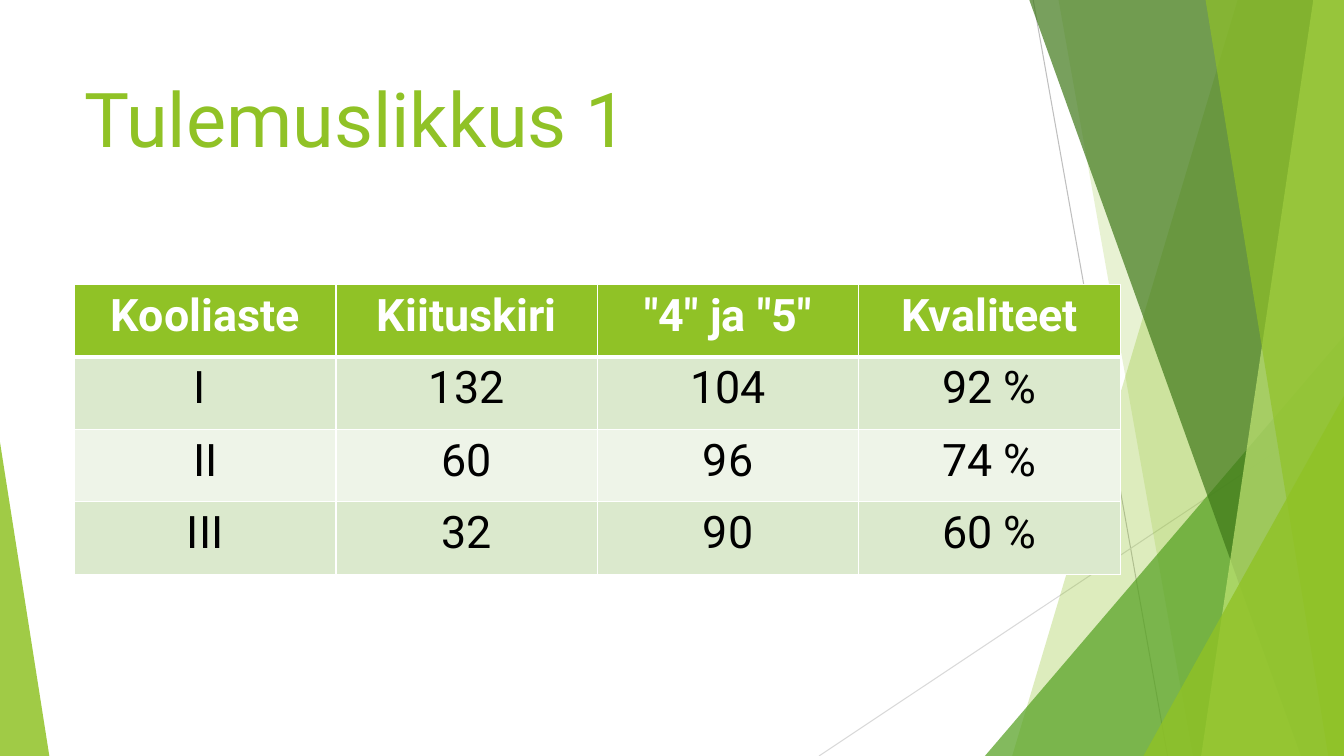
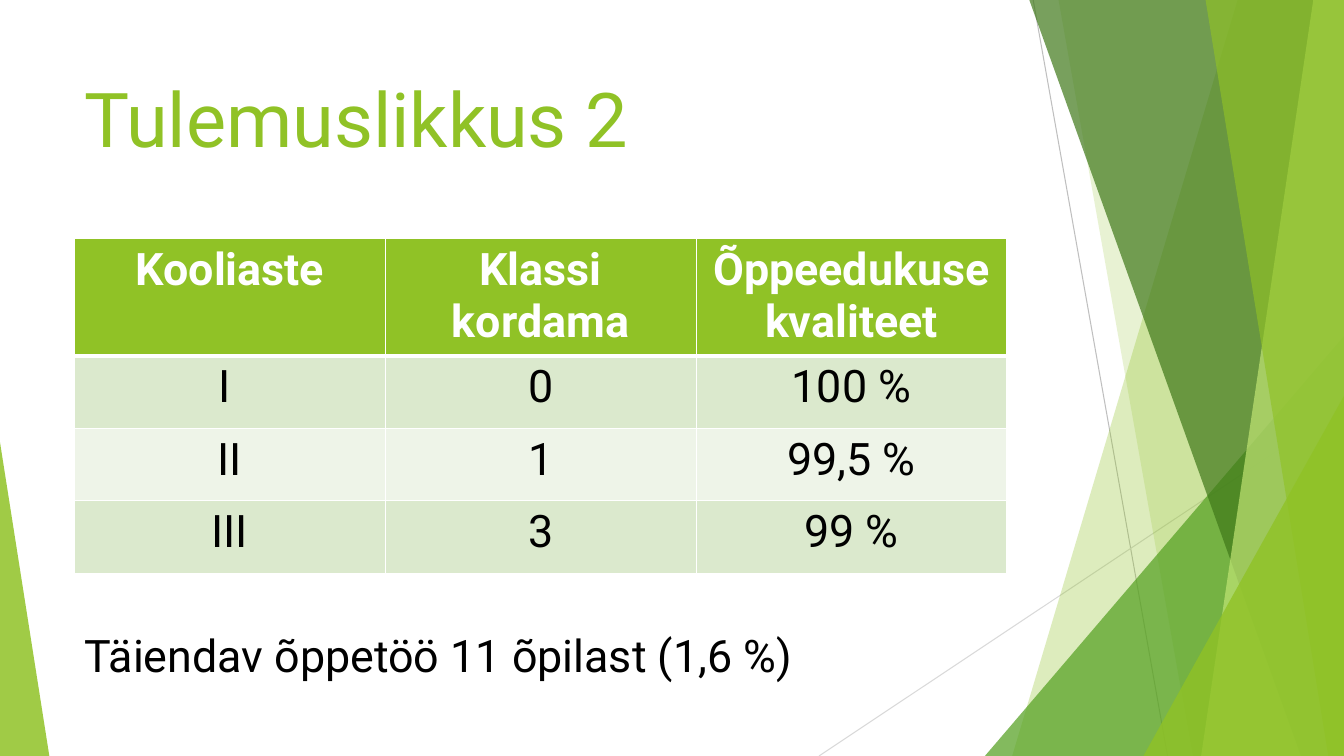
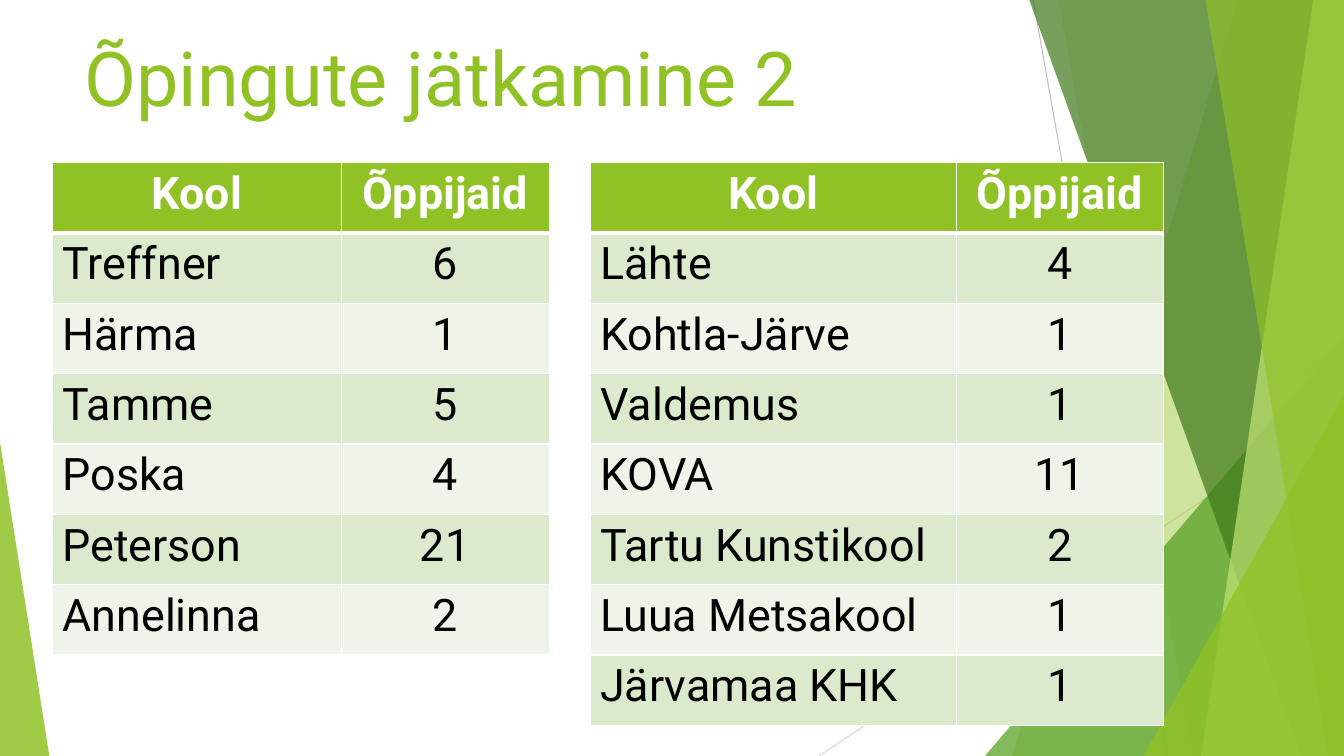
"""Build three slides of school results tables on a faceted green background."""
from lxml.etree import SubElement
from pptx import Presentation
from pptx.dml.color import RGBColor
from pptx.enum.shapes import MSO_CONNECTOR, MSO_SHAPE
from pptx.enum.text import PP_ALIGN
from pptx.oxml.ns import qn
from pptx.util import Pt

PX = 9525
WIDTH, HEIGHT = 1280, 720
FONT = "Roboto"
COLOURS = {
    "green": "90C226", "leaf": "54A021", "forest": "3F7819", "lime": "C0E474",
    "band": "DBE9CD", "pale": "EEF4E8", "white": "FFFFFF", "black": "000000",
    "grey": "BFBFBF", "light grey": "D9D9D9",
}
GUIDES = [("grey", 984, 0, 1112, 720), ("light grey", 1280, 387, 780, 720)]
FACETS = [
    ("panel", "green", 30, (1179, 964)),
    ("panel", "green", 20, (1008, 1136)),
    ("triangle", "leaf", 72, (938, 320, 342, 400, 1)),
    ("panel", "forest", 70, (980, 1239)),
    ("panel", "lime", 70, (1251, 1144)),
    ("panel", "green", 65, (1148, 1265)),
    ("triangle", "green", 80, (1089, 377, 191, 343, 1)),
    ("triangle", "green", 85, (0, 421, 47, 299, 0)),
]
SLIDES = [
    {
        "title": ("Tulemuslikkus 1", 64, 138),
        "tables": [{
            "left": 71, "top": 271, "columns": [249] * 4, "header": 69, "row": 69,
            "first": PP_ALIGN.CENTER,
            "rows": [
                ("Kooliaste", "Kiituskiri", '"4" ja "5"', "Kvaliteet"),
                ("I ", "132", "104", "92 %"),
                ("II", "60", "96", "74 %"),
                ("III", "32", "90", "60 %"),
            ],
        }],
    },
    {
        "title": ("Tulemuslikkus 2", 64, 138),
        "tables": [{
            "left": 71, "top": 227, "columns": [296] * 3, "header": 109, "row": 69,
            "first": PP_ALIGN.CENTER,
            "rows": [
                ("Kooliaste", "Klassi kordama", "Õppeedukuse kvaliteet"),
                ("I ", "0", "100 %"),
                ("II", "1", "99,5 %"),
                ("III", "3", "99 %"),
            ],
        }],
        "note": "Täiendav õppetöö 11 õpilast (1,6 %)",
    },
    {
        "title": ("Õpingute jätkamine 2", 25, 111),
        "tables": [
            {
                "left": 50, "top": 155, "columns": [275, 198], "header": 67, "row": 67,
                "first": PP_ALIGN.LEFT,
                "rows": [
                    ("Kool", "Õppijaid"), ("Treffner", "6"), ("Härma", "1"),
                    ("Tamme", "5"), ("Poska", "4"), ("Peterson", "21"),
                    ("Annelinna", "2"),
                ],
            },
            {
                "left": 562, "top": 155, "columns": [349, 197], "header": 67, "row": 67,
                "first": PP_ALIGN.LEFT,
                "rows": [
                    ("Kool", "Õppijaid"), ("Lähte", "4"), ("Kohtla-Järve", "1"),
                    ("Valdemus", "1"), ("KOVA", "11"), ("Tartu Kunstikool", "2"),
                    ("Luua Metsakool", "1"), ("Järvamaa KHK", "1"),
                ],
            },
        ],
    },
]


def write(frame, text, size, colour, bold=False, align=PP_ALIGN.LEFT):
    frame.word_wrap = True
    paragraph = frame.paragraphs[0]
    paragraph.text = text
    paragraph.alignment = align
    paragraph.font.name = FONT
    paragraph.font.size = Pt(size)
    paragraph.font.bold = bold
    paragraph.font.color.rgb = RGBColor.from_string(COLOURS[colour])


def add_border(cell, side, points):
    line = SubElement(cell._tc.get_or_add_tcPr(), qn(f"a:ln{side}"), w=str(Pt(points)))
    SubElement(SubElement(line, qn("a:solidFill")), qn("a:srgbClr"), val=COLOURS["white"])


presentation = Presentation()
presentation.slide_width = WIDTH * PX
presentation.slide_height = HEIGHT * PX

for content in SLIDES:
    slide = presentation.slides.add_slide(presentation.slide_layouts[6])
    shapes = slide.shapes

    for colour, *ends in GUIDES:
        guide = shapes.add_connector(MSO_CONNECTOR.STRAIGHT, *(end * PX for end in ends))
        guide.line.color.rgb = RGBColor.from_string(COLOURS[colour])
        guide.line.width = Pt(0.75)
        SubElement(guide._element.spPr, qn("a:effectLst"))

    for kind, colour, opacity, geometry in FACETS:
        if kind == "panel":
            top_x, bottom_x = geometry
            builder = shapes.build_freeform(top_x, -1, scale=PX)
            builder.add_line_segments([(WIDTH, -1), (WIDTH, HEIGHT), (bottom_x, HEIGHT)])
            facet = builder.convert_to_shape()
        else:
            *box, apex = geometry
            facet = shapes.add_shape(MSO_SHAPE.ISOSCELES_TRIANGLE, *(side * PX for side in box))
            facet.adjustments[0] = apex
        facet.shadow.inherit = False
        facet.line.fill.background()
        facet.fill.solid()
        facet.fill.fore_color.rgb = RGBColor.from_string(COLOURS[colour])
        fill_colour = facet._element.spPr.find(qn("a:solidFill")).find(qn("a:srgbClr"))
        SubElement(fill_colour, qn("a:alpha"), val=str(opacity * 1000))

    title, title_top, title_height = content["title"]
    title_box = shapes.add_textbox(71 * PX, title_top * PX, 902 * PX, title_height * PX)
    write(title_box.text_frame, title, 54, "green")

    for block in content["tables"]:
        rows, columns = block["rows"], block["columns"]
        heights = [block["header"]] + [block["row"]] * (len(rows) - 1)
        table = shapes.add_table(
            len(rows), len(columns), block["left"] * PX, block["top"] * PX,
            sum(columns) * PX, sum(heights) * PX,
        ).table
        for column, width in zip(table.columns, columns):
            column.width = width * PX
        for row_index, texts in enumerate(rows):
            table.rows[row_index].height = heights[row_index] * PX
            is_header = row_index == 0
            fill = "green" if is_header else ("pale", "band")[row_index % 2]
            for column_index, text in enumerate(texts):
                cell = table.cell(row_index, column_index)
                is_label = column_index == 0 and not is_header
                write(cell.text_frame, text, 32, "white" if is_header else "black",
                      is_header, block["first"] if is_label else PP_ALIGN.CENTER)
                for side in "LRTB":
                    is_heavy = (row_index, side) in [(0, "B"), (1, "T")]
                    add_border(cell, side, 3 if is_heavy else 1)
                cell.fill.solid()
                cell.fill.fore_color.rgb = RGBColor.from_string(COLOURS[fill])

    if "note" in content:
        note_box = shapes.add_textbox(71 * PX, 593 * PX, 799 * PX, 61 * PX)
        write(note_box.text_frame, content["note"], 32, "black")

presentation.save("out.pptx")
